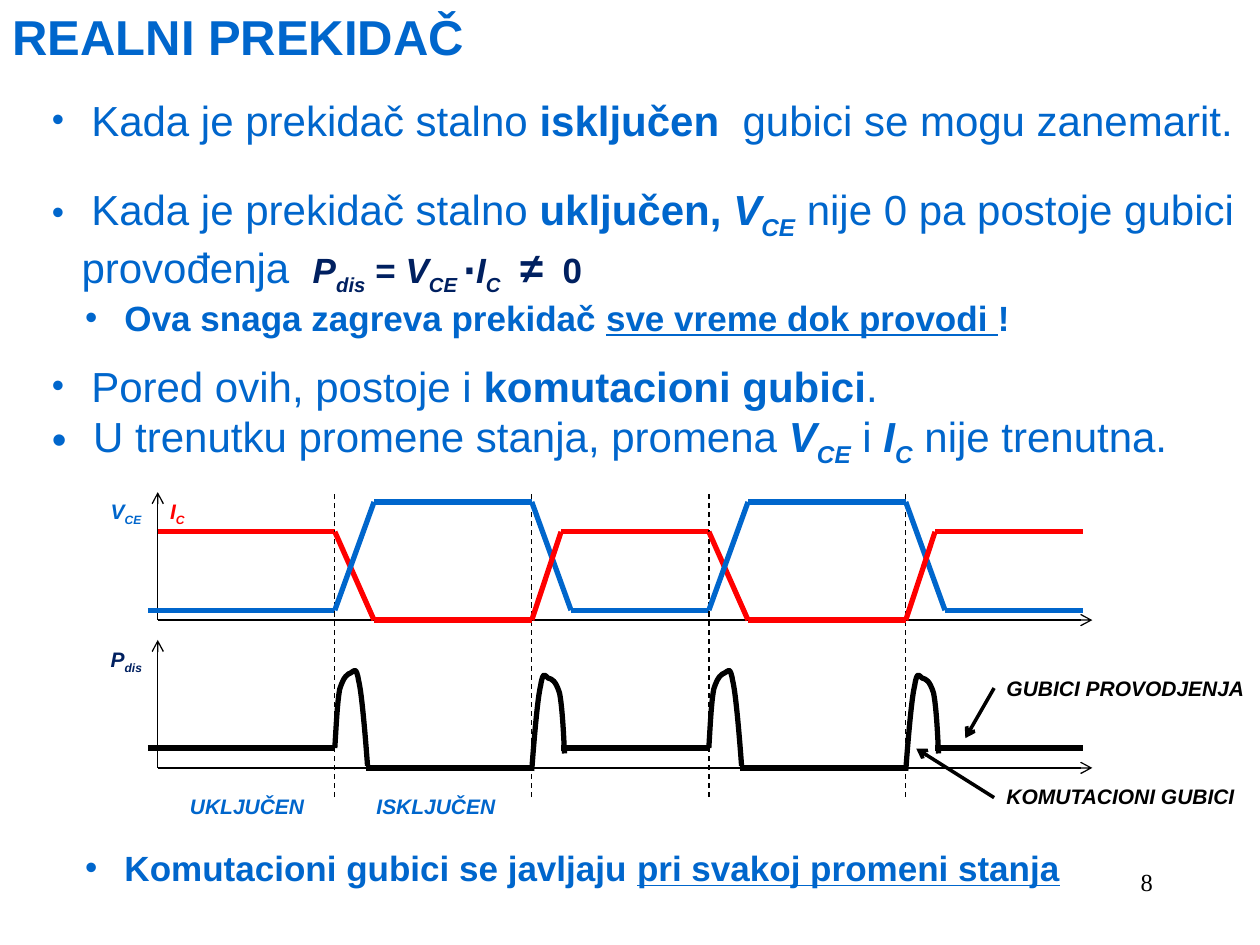
"""Build the slide on switching and conduction losses of a real switch."""
from lxml.etree import SubElement
from pptx import Presentation
from pptx.dml.color import RGBColor
from pptx.enum.dml import MSO_LINE
from pptx.enum.shapes import MSO_CONNECTOR
from pptx.enum.text import MSO_ANCHOR, MSO_AUTO_SIZE, PP_ALIGN
from pptx.oxml.ns import qn
from pptx.util import Cm, Pt

BLUE = RGBColor(0x00, 0x66, 0xCC)
NAVY = RGBColor(0x00, 0x20, 0x60)
RED = RGBColor(0xFF, 0x00, 0x00)
BLACK = RGBColor(0x00, 0x00, 0x00)


def write(par, runs, size, tint, face="Arial"):
    for text, marks in runs:
        run = par.add_run()
        run.text = text
        font = run.font
        font.name, font.size = face, Pt(size)
        font.color.rgb = tint
        font.bold = "b" in marks
        font.italic = "i" in marks
        font.underline = "u" in marks
        if "s" in marks:
            run._r.get_or_add_rPr().set("baseline", "-25000")


def draw(start, end, tint=BLACK, width=3, arrow=False, dash=False):
    line = slide.shapes.add_connector(
        MSO_CONNECTOR.STRAIGHT, *[Cm(v) for v in (*start, *end)])
    line.line.color.rgb = tint
    line.line.width = Pt(width)
    if dash:
        line.line.dash_style = MSO_LINE.DASH
    if arrow:
        SubElement(line.line._get_or_add_ln(), qn("a:tailEnd"), type="arrow")
    SubElement(line._element.spPr, qn("a:effectLst"))


deck = Presentation()
deck.slide_width, deck.slide_height = Cm(25.4), Cm(19.05)
slide = deck.slides.add_slide(deck.slide_layouts[4])

title = slide.shapes.title
title.left, title.top, title.width, title.height = Cm(0), Cm(0), Cm(24.97), Cm(1.45)
title.text_frame.auto_size = MSO_AUTO_SIZE.NONE
title.text_frame.vertical_anchor = MSO_ANCHOR.TOP
head = title.text_frame.paragraphs[0]
head.alignment = PP_ALIGN.LEFT
write(head, [("REALNI PREKIDAČ", "b")], 28, BLUE)

lists = [
    (1, 1.78, 1.8, [
        (0, [([(" ", "")], 20, BLUE),
             ([("Kada je prekidač stalno ", ""), ("isključen", "b"),
               ("  gubici se mogu zanemarit.", "")], 24, BLUE)]),
    ]),
    (2, 3.58, 3.56, [
        (0, [([(" ", "")], 20, BLUE),
             ([("Kada je prekidač stalno ", ""), ("uključen,", "b"),
               (" V", "bi"), ("CE", "bis"),
               (" nije 0 pa postoje gubici provođenja  ", "")], 24, BLUE),
             ([("P", "bi"), ("dis", "bis"), (" = ", "b"), ("V", "bi"),
               ("CE ", "bis"), ("⋅", "b"), ("I", "bi"), ("C", "bis"),
               ("  ", "b")], 20, NAVY),
             ([("≠", "b")], 24, NAVY), ([("  0", "b")], 20, NAVY)]),
        (1, [([(" Ova snaga zagreva prekidač ", "b"),
               ("sve vreme dok provodi ", "bu"), ("!", "b")], 20, BLUE)]),
    ]),
    (3, 7.14, 2.5, [
        (0, [([(" ", "")], 20, BLUE),
             ([("Pored ovih, postoje i ", ""), ("komutacioni gubici", "b"),
               (".", "")], 24, BLUE)]),
        (0, [([(" U trenutku promene stanja, promena ", ""), ("V", "bi"),
               ("CE", "bis"), (" i ", ""), ("I", "bi"), ("C", "bis"),
               (" nije trenutna.", "")], 24, BLUE)]),
    ]),
    (4, 16.94, 1.25, [
        (1, [([(" Komutacioni gubici se javljaju ", "b"),
               ("pri svakoj promeni stanja", "bu")], 20, BLUE)]),
    ]),
]
for idx, top, height, items in lists:
    body = slide.placeholders[idx]
    body.left, body.top, body.width, body.height = Cm(0.79), Cm(top), Cm(24.61), Cm(height)
    frame = body.text_frame
    frame.auto_size = MSO_AUTO_SIZE.NONE
    frame.vertical_anchor = MSO_ANCHOR.TOP
    for num, (level, parts) in enumerate(items):
        par = frame.add_paragraph() if num else frame.paragraphs[0]
        props = par._p.get_or_add_pPr()
        props.set("marL", str(Cm((0.6, 1.27)[level])))
        props.set("indent", str(-Cm(0.6)))
        SubElement(props, qn("a:buFont"), typeface="Arial")
        SubElement(props, qn("a:buChar"), char="•")
        par.level = level
        par.space_before = Pt(0)
        for runs, size, tint in parts:
            write(par, runs, size, tint)

left, right, span = 3.18, 22.02, 7.54
for base, peak in ((12.5, 9.92), (15.48, 12.9)):
    draw((left, base), (left, peak), width=0.75, arrow=True)
    draw((left, base), (right, base), width=0.75, arrow=True)

draw((2.98, 12.3), (6.75, 12.3), BLUE)
draw((left, 10.72), (6.75, 10.72), RED)
draw((2.98, 15.08), (6.75, 15.08))

rise = [(0, 15.08), (0.03, 14.61), (0.05, 14.15), (0.1, 13.89),
        (0.18, 13.64), (0.25, 13.59), (0.33, 13.56), (0.38, 13.54),
        (0.43, 13.41), (0.48, 13.72), (0.56, 14.02), (0.66, 15.44), (0.66, 15.44)]
fall = [(0.66, 15.19), (0.64, 14.71), (0.61, 14.22), (0.56, 13.97),
        (0.48, 13.72), (0.41, 13.69), (0.33, 13.67), (0.28, 13.64),
        (0.23, 13.49), (0.18, 13.82), (0.1, 14.12), (0, 15.54), (0, 15.54)]

for off in (6.75, 6.75 + span):
    on, last = off + 3.97, min(off + span, 21.83)
    for edge in (off, on):
        draw((edge, 16.07), (edge, 9.92), width=0.75, dash=True)
    draw((off, 10.72), (off + 0.79, 12.5), RED)
    draw((off + 0.79, 12.5), (on, 12.5), RED)
    draw((off, 12.3), (off + 0.79, 10.12), BLUE)
    draw((off + 0.79, 10.12), (on, 10.12), BLUE)
    draw((on, 10.12), (on + 0.79, 12.3), BLUE)
    draw((on + 0.79, 12.3), (last, 12.3), BLUE)
    draw((on, 12.5), (on + 0.59, 10.72), RED)
    draw((on + 0.59, 10.72), (last, 10.72), RED)
    draw((off + 0.63, 15.48), (on, 15.48))
    draw((on + 0.59, 15.08), (last, 15.08))
    for edge, knots in ((off, rise), (on, fall)):
        dots = [(Cm(edge + x), Cm(y)) for x, y in knots]
        pen = slide.shapes.build_freeform(*dots[0])
        pen.add_line_segments(dots[1:], close=False)
        pulse = pen.convert_to_shape()
        track = next(pulse._element.iter(qn("a:path")))
        steps = track.findall(qn("a:lnTo"))
        for k in range(0, len(steps), 3):
            curve = SubElement(track, qn("a:cubicBezTo"))
            for step in steps[k:k + 3]:
                curve.append(step[0])
                track.remove(step)
        pulse.shadow.inherit = False
        pulse.fill.background()
        pulse.line.color.rgb = BLACK
        pulse.line.width = Pt(3)

draw((20.04, 13.87), (19.46, 14.88), width=2, arrow=True)
draw((20.04, 16.08), (18.47, 15.09), width=2, arrow=True)

labels = [
    (1.98, 9.92, 1.2, BLUE, [("V", "bi"), ("CE", "bis")]),
    (3.18, 9.92, 1.2, RED, [("I", "bi"), ("C", "bis")]),
    (1.98, 12.9, 1.4, NAVY, [("P", "bi"), ("dis", "bis")]),
    (3.58, 15.88, 2.97, BLUE, [("UKLJUČEN", "bi")]),
    (7.34, 15.88, 2.97, BLUE, [("ISKLJUČEN", "bi")]),
    (20.04, 13.49, 5.36, BLACK, [("GUBICI PROVODJENJA", "bi")]),
    (20.04, 15.67, 5.36, BLACK, [("KOMUTACIONI GUBICI", "bi")]),
]
for x, y, width, tint, runs in labels:
    box = slide.shapes.add_textbox(Cm(x), Cm(y), Cm(width), Cm(0.76))
    box.text_frame.word_wrap = True
    write(box.text_frame.paragraphs[0], runs, 12, tint)

page = slide.shapes.add_textbox(Cm(18.21), Cm(17.35), Cm(5.28), Cm(1.27))
page.text_frame.word_wrap = True
mark = page.text_frame.paragraphs[0]
mark.alignment = PP_ALIGN.RIGHT
write(mark, [("8", "")], 14, BLACK, "Times New Roman")

deck.save("out.pptx")
